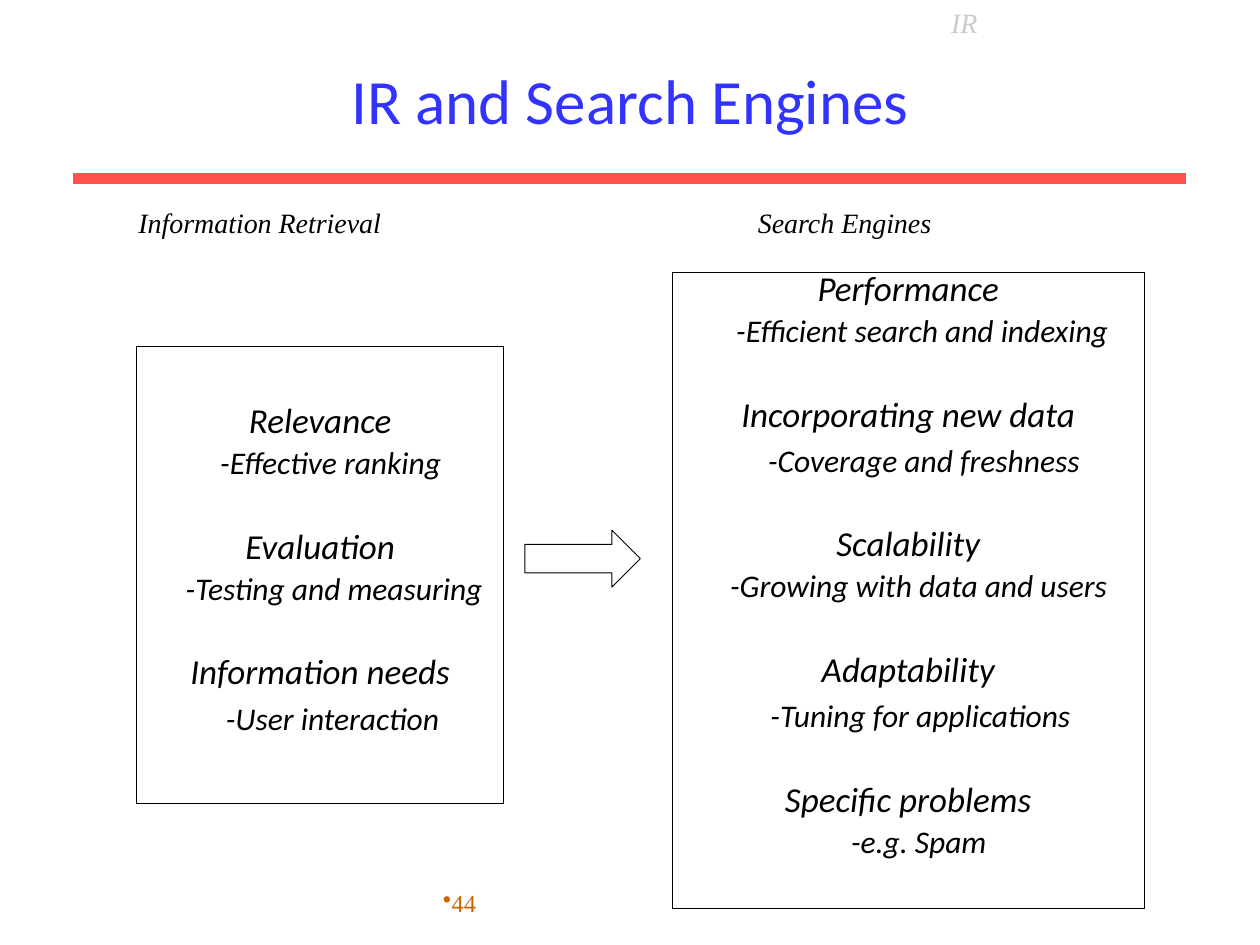
from lxml.etree import SubElement
from pptx import Presentation
from pptx.dml.color import RGBColor
from pptx.enum.shapes import MSO_CONNECTOR, MSO_SHAPE
from pptx.enum.text import MSO_ANCHOR, PP_ALIGN
from pptx.oxml.ns import qn
from pptx.util import Pt

BLACK = RGBColor(0x00, 0x00, 0x00)
GRAY = RGBColor(0xCC, 0xCC, 0xCC)
BLUE = RGBColor(0x33, 0x33, 0xFF)
RED = RGBColor(0xFF, 0x50, 0x50)
ORANGE = RGBColor(0xCC, 0x66, 0x00)
SANS = "Calibri"
SERIF = "Times New Roman"
TIGHT = 0.65
GROUP_GAP = 33

RETRIEVAL = [
    ("Relevance", "-Effective ranking", 12, 9),
    ("Evaluation", "-Testing and measuring", 16, 9),
    ("Information needs", "-User interaction", 14, 11.5),
]
ENGINES = [
    ("Performance", "-Efficient search and indexing", 16, 9),
    ("Incorporating new data", "-Coverage and freshness", 18, 11.5),
    ("Scalability", "-Growing with data and users", 12, 9),
    ("Adaptability", "-Tuning for applications", 14, 11.5),
    ("Specific problems", "-e.g. Spam", 12, 9),
]


def style(p, text, size, name, color, italic=False, align=PP_ALIGN.LEFT):
    p.text = text
    p.alignment = align
    font = p.font
    font.size = Pt(size)
    font.name = name
    font.italic = italic
    font.color.rgb = color


def add_text(s, box, text, size, name, color, anchor=MSO_ANCHOR.TOP, **kw):
    sp = s.shapes.add_textbox(*map(Pt, box))
    tf = sp.text_frame
    tf.word_wrap = True
    tf.vertical_anchor = anchor
    p = tf.paragraphs[0]
    style(p, text, size, name, color, **kw)
    return p


def add_caption(s, box, text):
    p = add_text(s, box, text, 16, SERIF, BLACK, italic=True)
    p.line_spacing = TIGHT


def add_outline(s, kind, box):
    sp = s.shapes.add_shape(kind, *map(Pt, box))
    sp.shadow.inherit = False
    sp.fill.background()
    sp.line.color.rgb = BLACK
    sp.line.width = Pt(0.5)
    return sp


def add_topics(s, box, topics, top):
    tf = add_outline(s, MSO_SHAPE.RECTANGLE, box).text_frame
    tf.word_wrap = True
    tf.vertical_anchor = MSO_ANCHOR.TOP
    tf.margin_top = Pt(top)
    for i, (heading, detail, indent, gap) in enumerate(topics):
        p = tf.add_paragraph() if i else tf.paragraphs[0]
        style(p, heading, 20, SANS, BLACK, True, PP_ALIGN.CENTER)
        p.line_spacing = TIGHT
        p.space_before = Pt(GROUP_GAP if i else 0)
        p = tf.add_paragraph()
        style(p, detail, 18, SANS, BLACK, True, PP_ALIGN.CENTER)
        p.line_spacing = TIGHT
        p.space_before = Pt(gap)
        p._p.get_or_add_pPr().set("marL", str(Pt(indent)))


def add_rule(s, x1, x2, y):
    c = s.shapes.add_connector(MSO_CONNECTOR.STRAIGHT, Pt(x1), Pt(y), Pt(x2), Pt(y))
    c.line.color.rgb = RED
    c.line.width = Pt(6)
    SubElement(c._element.spPr, qn("a:effectLst"))


def add_bullet(p):
    pPr = p._p.get_or_add_pPr()
    bullet = pPr.makeelement(qn("a:buChar"), {"char": "•"})
    pPr.insert_element_before(bullet, "a:tabLst", "a:defRPr", "a:extLst")


def main():
    prs = Presentation()
    prs.slide_width, prs.slide_height = Pt(720), Pt(540)
    s = prs.slides.add_slide(prs.slide_layouts[6])

    add_rule(s, 42, 678, 102)
    add_bullet(add_text(s, (246, 504, 228, 36), "44", 14, SERIF, ORANGE))
    add_text(s, (54, 18, 612, 78), "IR and Search Engines", 36, SANS, BLUE,
             MSO_ANCHOR.MIDDLE, align=PP_ALIGN.CENTER)
    add_topics(s, (78, 198, 210, 261), RETRIEVAL, 37.5)
    add_topics(s, (384, 156, 270, 363), ENGINES, 4)
    arrow = add_outline(s, MSO_SHAPE.RIGHT_ARROW, (300, 303, 66, 32.5))
    arrow.adjustments[1] = 0.5
    add_caption(s, (72, 120, 223, 26), "Information Retrieval")
    add_caption(s, (426, 120, 161, 26), "Search Engines")
    add_text(s, (380, 2, 342, 22), "IR", 16, SERIF, GRAY,
             MSO_ANCHOR.MIDDLE, italic=True, align=PP_ALIGN.CENTER)

    prs.save("out.pptx")


if __name__ == "__main__":
    main()
